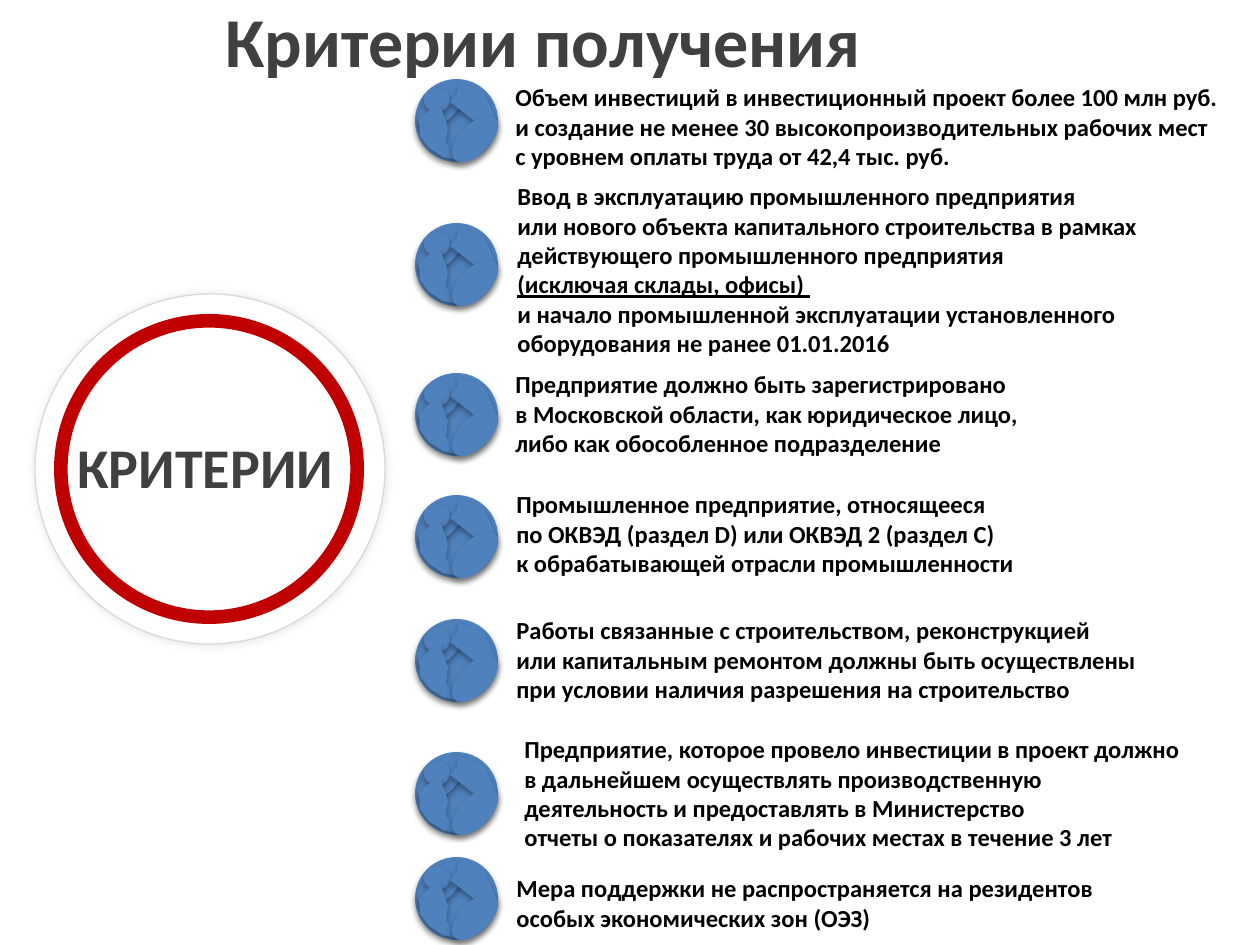
"""Build the slide listing the criteria for receiving support."""
from lxml import etree
from pptx import Presentation
from pptx import util as u
from pptx.dml.color import RGBColor
from pptx.enum import shapes, text
from pptx.oxml.ns import qn

SCALE = 914400 / 126
COLORS = {"white": "FFFFFF", "ink": "404040", "black": "000000", "blue": "4F81BD",
          "red": "C00000", "edge": "D9D9D9", "glow": "BFBFBF"}
BADGE_SHADOW = {"color": "black", "alpha": 32, "blur": 3.5, "distance": 2.2}
RING_SHADOW = {"color": "glow", "alpha": 40, "blur": 5, "distance": 0}

BADGE_LEFT = 415
UPPER_LAND = [(44, 4), (42, 14), (35, 23), (67, 48), (69, 55), (82, 42), (69, 14)]
LOWER_LAND = [(28, 24), (13, 32), (4, 42), (5, 57), (14, 69), (28, 78),
              (42, 81), (31, 64), (33, 48), (26, 29)]

CRITERIA = [
    (79, (503, 76, 757, 102), [
        "Объем инвестиций в инвестиционный проект более 100 млн руб. \n"
        "и создание не менее 30 высокопроизводительных рабочих мест \n"
        "с уровнем оплаты труда от 42,4 тыс. руб."]),
    (223, (505, 175, 755, 190), [
        "Ввод в эксплуатацию промышленного предприятия\n"
        "или нового объекта капитального строительства в рамках \n"
        "действующего промышленного предприятия \n",
        "(исключая склады, офисы) \n",
        "и начало промышленной эксплуатации установленного \n"
        "оборудования не ранее 01.01.2016"]),
    (373, (503, 363, 683, 102), [
        "Предприятие должно быть зарегистрировано \n"
        "в Московской области, как юридическое лицо, \n"
        "либо как обособленное подразделение"]),
    (495, (504, 483, 643, 102), [
        "Промышленное предприятие, относящееся \n"
        "по ОКВЭД (раздел D) или ОКВЭД 2 (раздел C) \n"
        "к обрабатывающей отрасли промышленности"]),
    (619, (504, 609, 685, 102), [
        "Работы связанные с строительством, реконструкцией \n"
        "или капитальным ремонтом должны быть осуществлены \n"
        "при условии наличия разрешения на строительство"]),
    (752, (512, 728, 683, 131), [
        "Предприятие, которое провело инвестиции в проект должно "
        "в дальнейшем осуществлять производственную \n"
        "деятельность и предоставлять в Министерство \n"
        "отчеты о показателях и рабочих местах в течение 3 лет"]),
    (857, (504, 867, 685, 72), [
        "Мера поддержки не распространяется на резидентов "
        "особых экономических зон (ОЭЗ)"]),
]


def px(value):
    return u.Emu(round(value * SCALE))


def color(name):
    return RGBColor.from_string(COLORS[name])


def write(paragraph, content, size=14, ink="black", underline=False):
    for index, line in enumerate(content.split("\n")):
        if index:
            paragraph.add_line_break()
        if line:
            run = paragraph.add_run()
            run.text = line
            run.font.name = "Calibri"
            run.font.size = u.Pt(size)
            run.font.bold = True
            run.font.underline = underline
            run.font.color.rgb = color(ink)


class CriteriaSlide:
    """Hold the slide and draw its elements in one style."""

    def __init__(self, presentation):
        self.slide = presentation.slides.add_slide(presentation.slide_layouts[5])

    def title(self, content, box):
        shape = self.slide.shapes.title
        shape.left, shape.top, shape.width, shape.height = map(px, box)
        frame = shape.text_frame
        frame.auto_size = text.MSO_AUTO_SIZE.NONE
        frame.vertical_anchor = text.MSO_ANCHOR.MIDDLE
        frame.paragraphs[0].alignment = text.PP_ALIGN.LEFT
        write(frame.paragraphs[0], content, size=40, ink="ink")

    def text_box(self, parts, box, align=text.PP_ALIGN.LEFT, **style):
        frame = self.slide.shapes.add_textbox(*map(px, box)).text_frame
        frame.word_wrap = True
        frame.auto_size = text.MSO_AUTO_SIZE.SHAPE_TO_FIT_TEXT
        frame.paragraphs[0].alignment = align
        for index, part in enumerate(parts):
            write(frame.paragraphs[0], part, underline=index == 1, **style)

    def paint(self, shape, fill, line=None, shadow=None):
        shape.shadow.inherit = False
        shape.fill.solid()
        shape.fill.fore_color.rgb = color(fill)
        if line:
            shape.line.color.rgb = color(line)
            shape.line.width = u.Pt(0.75)
        else:
            shape.line.fill.background()
        if shadow:
            effects = shape._element.spPr.find(qn("a:effectLst"))
            outer = etree.SubElement(
                effects, qn("a:outerShdw"), blurRad=str(u.Pt(shadow["blur"])),
                dist=str(u.Pt(shadow["distance"])), dir="5400000", rotWithShape="0")
            tint = etree.SubElement(outer, qn("a:srgbClr"), val=COLORS[shadow["color"]])
            etree.SubElement(tint, qn("a:alpha"), val=str(shadow["alpha"] * 1000))

    def preset(self, kind, box, fill, rotation=0, parent=None, **look):
        shape = (parent or self.slide).shapes.add_shape(kind, *map(px, box))
        shape.rotation = rotation
        self.paint(shape, fill, **look)
        return shape

    def land(self, group, corners, top):
        points = [(px(BADGE_LEFT + x), px(top + y)) for x, y in corners]
        builder = group.shapes.build_freeform(*points[0])
        builder.add_line_segments(points[1:], close=True)
        self.paint(builder.convert_to_shape(), "blue", shadow=BADGE_SHADOW)

    def badge(self, top):
        group = self.slide.shapes.add_group_shape()

        def oval(x, y, width, height, rotation=0):
            self.preset(shapes.MSO_SHAPE.OVAL, (BADGE_LEFT + x, top + y, width, height),
                        "blue", rotation, group, shadow=BADGE_SHADOW)

        oval(0, 0, 83, 83)
        oval(-3, 12, 58, 30, 315)
        oval(9, 9, 26, 24)
        self.land(group, UPPER_LAND, top)
        self.land(group, LOWER_LAND, top)
        oval(31, 45, 58, 30, 135)


def main():
    presentation = Presentation()
    presentation.slide_width, presentation.slide_height = px(1260), px(945)
    page = CriteriaSlide(presentation)
    page.title("Критерии получения", (213, -34, 764, 147))
    page.preset(shapes.MSO_SHAPE.OVAL, (35, 294, 350, 350), "white",
                line="edge", shadow=RING_SHADOW)
    ring = page.preset(shapes.MSO_SHAPE.DONUT, (54, 314, 310, 310), "red")
    ring.adjustments[0] = 0.044
    page.text_box(["КРИТЕРИИ"], (57, 426, 297, 81), text.PP_ALIGN.CENTER,
                  size=32, ink="ink")
    for badge_top, box, parts in CRITERIA:
        page.badge(badge_top)
        page.text_box(parts, box)
    presentation.save("out.pptx")


if __name__ == "__main__":
    main()
